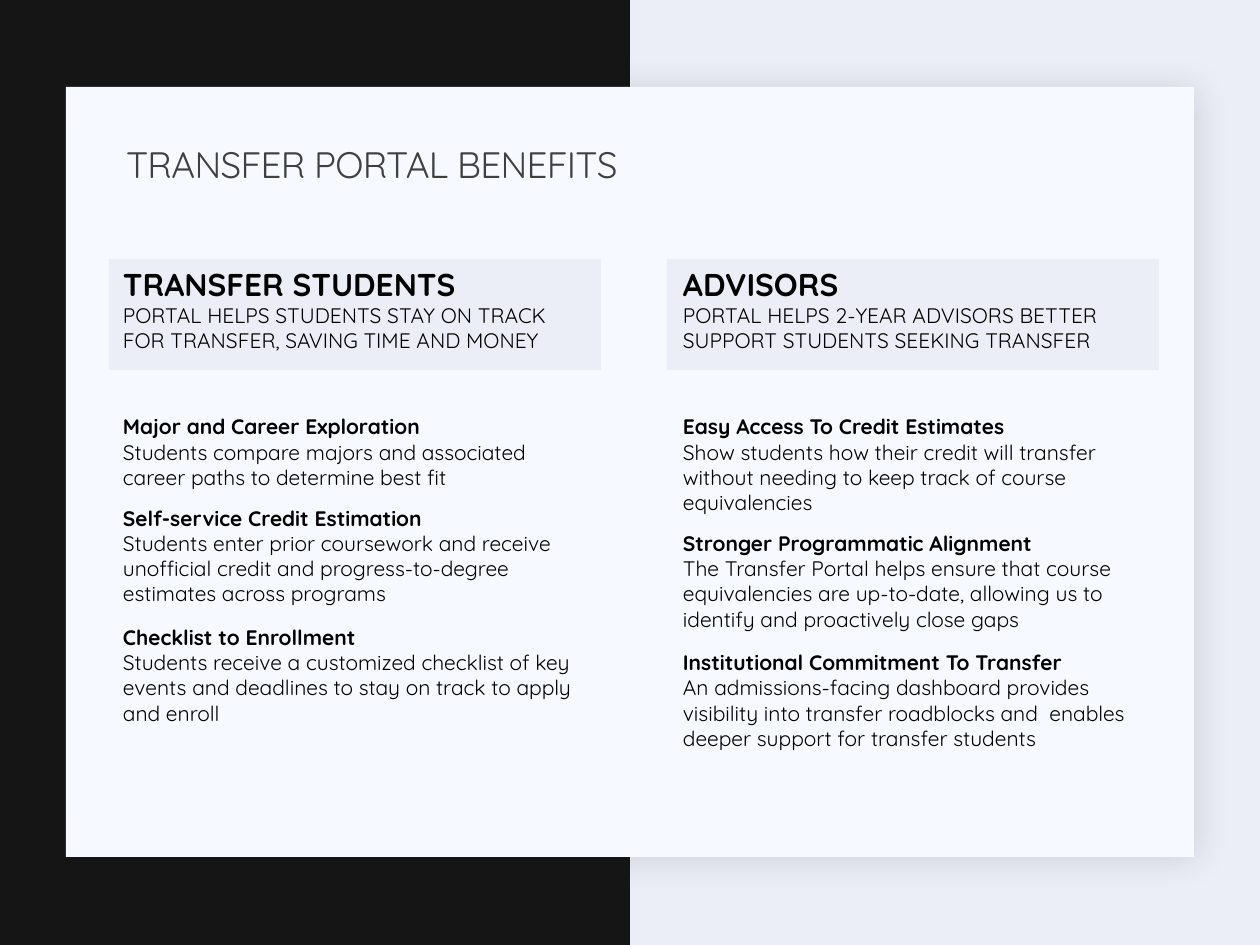
from dataclasses import dataclass

from lxml import etree
from pptx import Presentation
from pptx.dml.color import RGBColor
from pptx.enum.shapes import MSO_SHAPE
from pptx.enum.text import MSO_ANCHOR
from pptx.oxml.ns import qn
from pptx.util import Emu, Pt

PX = 914400 / 126  # EMU in one px


@dataclass(frozen=True)
class Theme:
    font: str = "Quicksand"
    dark: str = "141514"
    pale: str = "ECEEF7"
    card: str = "F6F9FF"
    shadow: str = "1F2125"
    title: str = "404040"
    text: str = "000000"
    title_size: float = 21
    head_size: float = 18
    body_size: float = 12


THEME = Theme()

# One entry per column: band left px, text left px, heading, summary, benefits
COLUMNS = [
    (109, 114, "TRANSFER STUDENTS",
     "PORTAL HELPS STUDENTS STAY ON TRACK FOR TRANSFER, SAVING TIME AND MONEY",
     [("Major and Career Exploration",
       "Students compare majors and associated career paths to determine best fit"),
      ("Self-service Credit Estimation",
       "Students enter prior coursework and receive unofficial credit and "
       "progress-to-degree estimates across programs"),
      ("Checklist to Enrollment",
       "Students receive a customized checklist of key events and deadlines "
       "to stay on track to apply and enroll")]),
    (667, 674, "ADVISORS",
     "PORTAL HELPS 2-YEAR ADVISORS BETTER SUPPORT STUDENTS SEEKING TRANSFER",
     [("Easy Access To Credit Estimates",
       "Show students how their credit will transfer without needing to keep "
       "track of course equivalencies"),
      ("Stronger Programmatic Alignment",
       "The Transfer Portal helps ensure that course equivalencies are "
       "up-to-date, allowing us to identify and proactively close gaps"),
      ("Institutional Commitment To Transfer",
       "An admissions-facing dashboard provides visibility into transfer "
       "roadblocks and  enables deeper support for transfer students")]),
]


def px(*values):
    return [Emu(round(v * PX)) for v in values]


def add_rect(slide, box, color):
    sp = slide.shapes.add_shape(MSO_SHAPE.RECTANGLE, *px(*box))
    sp.shadow.inherit = False
    sp.fill.solid()
    sp.fill.fore_color.rgb = RGBColor.from_string(color)
    sp.line.fill.background()
    return sp


def add_soft_shadow(sp, color, blur, distance, angle, alpha):
    effects = sp._element.spPr.find(qn("a:effectLst"))
    shadow = etree.SubElement(
        effects, qn("a:outerShdw"), blurRad=str(Pt(blur)),
        dist=str(Pt(distance)), dir=str(angle * 60000), algn="tl", rotWithShape="0")
    clr = etree.SubElement(shadow, qn("a:srgbClr"), val=color)
    etree.SubElement(clr, qn("a:alpha"), val=str(alpha * 1000))


def add_text(slide, box, paragraphs, anchor=MSO_ANCHOR.TOP, inset=9, right=0,
             color=THEME.text, line_spacing=None, before=0, after=0, tracking=None):
    """Each paragraph is a list of lines; each line is (text, size, bold)."""
    tf = slide.shapes.add_textbox(*px(*box)).text_frame
    tf.word_wrap = True
    tf.vertical_anchor = anchor
    tf.margin_left, tf.margin_right, tf.margin_top, tf.margin_bottom = px(inset, right, 6, 6)
    for i, lines in enumerate(paragraphs):
        p = tf.add_paragraph() if i else tf.paragraphs[0]
        p.line_spacing = line_spacing
        if i:
            p.space_before, p.space_after = Pt(before), Pt(after)
        for j, (text, size, bold) in enumerate(lines):
            if j:
                p.add_line_break()
            r = p.add_run()
            r.text = text
            r.font.name, r.font.size, r.font.bold = THEME.font, Pt(size), bold
            r.font.color.rgb = RGBColor.from_string(color)
            if tracking is not None:
                r._r.get_or_add_rPr().set("spc", str(round(tracking * 100)))


def add_column(slide, band_left, text_left, heading, summary, benefits):
    # Heading band
    add_rect(slide, (band_left, 259, 492, 111), THEME.pale)
    add_text(slide, (text_left, 258, 480, 102),
             [[(heading, THEME.head_size, True)], [(summary, THEME.body_size, False)]],
             anchor=MSO_ANCHOR.MIDDLE)
    # Benefits list
    size = THEME.body_size
    add_text(slide, (text_left, 408, 480, 401),
             [[(name, size, True), (detail, size, False)] for name, detail in benefits],
             before=9, after=1.5)


def main():
    prs = Presentation()
    prs.slide_width, prs.slide_height = px(1260, 945)
    slide = prs.slides.add_slide(prs.slide_layouts[6])

    # Background halves and card
    slide.background.fill.solid()
    slide.background.fill.fore_color.rgb = RGBColor.from_string(THEME.pale)
    add_rect(slide, (0, 0, 630, 945), THEME.dark)
    card = add_rect(slide, (66, 87, 1128, 770), THEME.card)
    add_soft_shadow(card, THEME.shadow, blur=20, distance=2, angle=45, alpha=15)

    # Title
    add_text(slide, (113, 137, 1039, 60),
             [[("TRANSFER PORTAL BENEFITS", THEME.title_size, False)]],
             anchor=MSO_ANCHOR.MIDDLE, inset=13, right=13, color=THEME.title,
             line_spacing=0.9, tracking=-0.4)

    # Columns
    for column in COLUMNS:
        add_column(slide, *column)

    prs.save("out.pptx")


if __name__ == "__main__":
    main()
